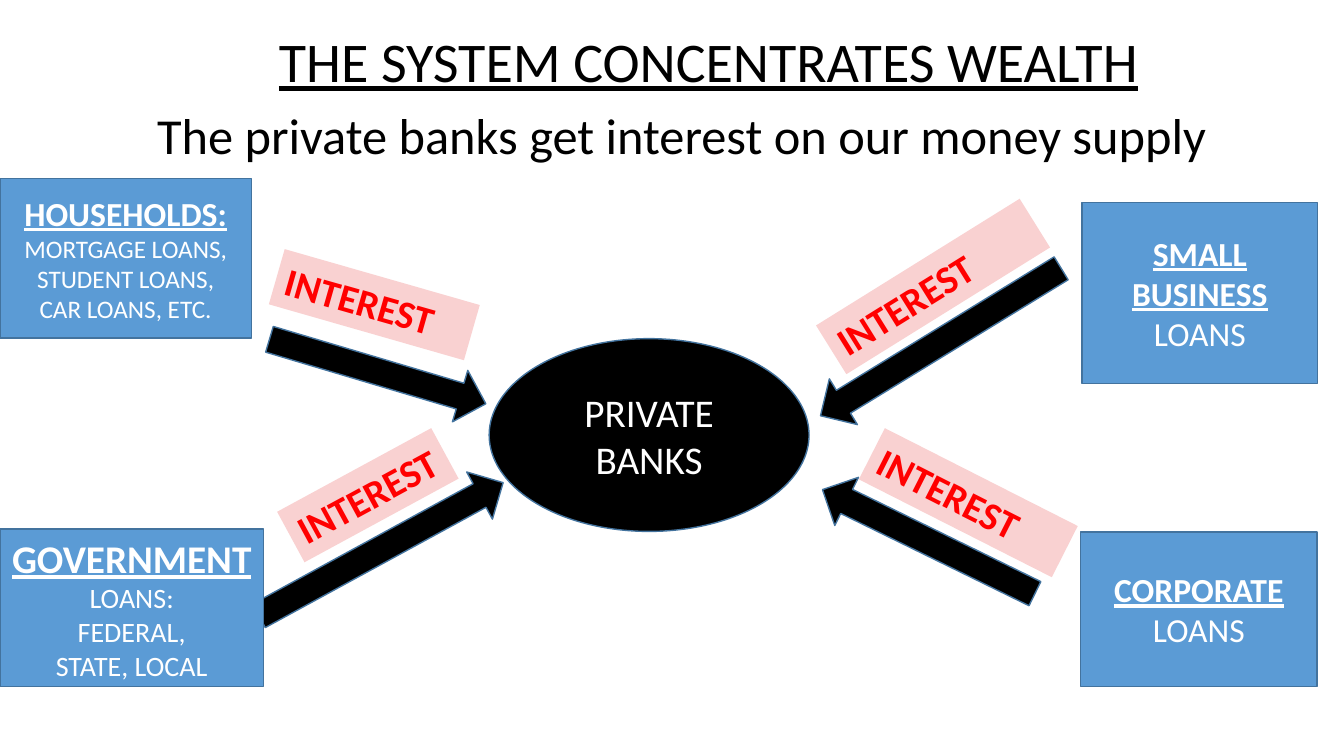
from pptx import Presentation
from pptx import util as u
from pptx.dml.color import RGBColor
from pptx.enum import shapes, text

BLACK = RGBColor(0x00, 0x00, 0x00)
WHITE = RGBColor(0xFF, 0xFF, 0xFF)
RED = RGBColor(0xFF, 0x00, 0x00)
PINK = RGBColor(0xF9, 0xD1, 0xD1)
BLUE = RGBColor(0x5B, 0x9B, 0xD5)
DARK_BLUE = RGBColor(0x43, 0x73, 0x9E)
CENTER, LEFT = text.PP_ALIGN.CENTER, text.PP_ALIGN.LEFT
MIDDLE, TOP = text.MSO_ANCHOR.MIDDLE, text.MSO_ANCHOR.TOP

presentation = Presentation()
presentation.slide_width = u.Inches(13.33)
presentation.slide_height = u.Inches(7.5)
COLUMN = presentation.slide_width / 100
ROW = presentation.slide_height / 100
slide = presentation.slides.add_slide(presentation.slide_layouts[5])


def write(shape, paragraphs, color=WHITE, align=CENTER, anchor=MIDDLE, wrap=True):
    frame = shape.text_frame
    frame.auto_size = text.MSO_AUTO_SIZE.NONE
    frame.word_wrap = wrap
    frame.vertical_anchor = anchor
    for index, runs in enumerate(paragraphs):
        paragraph = frame.add_paragraph() if index else frame.paragraphs[0]
        paragraph.alignment = align
        for words, size, bold, underline in runs:
            run = paragraph.add_run()
            run.text = words
            run.font.name = "Calibri"
            run.font.size = u.Pt(size)
            run.font.bold = bold
            run.font.underline = underline
            run.font.color.rgb = color


def add_block(preset, left, top, width, height, fill, line=None, rotation=0):
    shape = slide.shapes.add_shape(
        preset, round(left * COLUMN), round(top * ROW),
        round(width * COLUMN), round(height * ROW))
    shape.shadow.inherit = False
    shape.rotation = rotation
    shape.fill.solid()
    shape.fill.fore_color.rgb = fill
    if line is None:
        shape.line.fill.background()
    else:
        shape.line.color.rgb = line
        shape.line.width = u.Pt(1)
    return shape


preset = shapes.MSO_SHAPE

title = slide.shapes.title
title.left, title.top = round(20 * COLUMN), round(2.9 * ROW)
title.width, title.height = round(65.85 * COLUMN), round(10.3 * ROW)
write(title, [[("THE SYSTEM CONCENTRATES WEALTH", 40, False, True)]],
      color=BLACK, align=LEFT, anchor=TOP)

arrows = [
    (60.3, 68.1, 17.6, 206.1),
    (18, 69.1, 20.7, 331.4),
    (59.5, 41.7, 21, 148.5),
    (19.7, 45.6, 16.8, 16.6),
]
for left, top, width, rotation in arrows:
    add_block(preset.RIGHT_ARROW, left, top, width, 7.1, BLACK, DARK_BLUE, rotation)

banks = add_block(preset.OVAL, 36.4, 44.8, 23.8, 25.5, BLACK, DARK_BLUE)
write(banks, [[(word, 28, False, False)] for word in ("PRIVATE", "BANKS")])

borrowers = [
    (80.4, 70.4, 17.6, 20.4, [
        [("CORPORATE", 24, True, True)],
        [("LOANS", 24, False, False)]]),
    (0, 23.6, 18.7, 21.1, [
        [("HOUSEHOLDS:", 24, True, True)],
        [("MORTGAGE LOANS,", 18, False, False)],
        [("STUDENT LOANS,", 18, False, False)],
        [("CAR LOANS, ETC.", 18, False, False)]]),
    (0, 70, 19.6, 20.8, [
        [("GOVERNMENT", 28, True, True), (" LOANS:", 20, False, False)],
        [("FEDERAL,", 20, False, False)],
        [("STATE, LOCAL", 20, False, False)]]),
    (80.5, 26.8, 17.55, 23.9, [
        [("SMALL", 24, True, True)],
        [("BUSINESS", 24, True, True)],
        [("LOANS", 24, False, False)]]),
]
for left, top, width, height, paragraphs in borrowers:
    box = add_block(preset.FLOWCHART_PROCESS, left, top, width, height, BLUE, DARK_BLUE)
    write(box, paragraphs)

interest_labels = [
    (20.3, 36.5, 15.1, 16),
    (60.5, 34.1, 17.85, 328.1),
    (64, 62.7, 16.1, 26.9),
    (20.85, 61.7, 13.05, 331.5),
]
for left, top, width, rotation in interest_labels:
    label = add_block(preset.RECTANGLE, left, top, width, 7.6, PINK, rotation=rotation)
    write(label, [[("INTEREST", 28, True, False)]], color=RED, align=LEFT, anchor=TOP)

subtitle = add_block(preset.RECTANGLE, 10.95, 13.1, 80.25, 9.5, WHITE)
write(subtitle, [[("The private banks get interest on our money supply", 36, False, False)]],
      color=BLACK, align=LEFT, anchor=TOP, wrap=False)

presentation.save("out.pptx")
